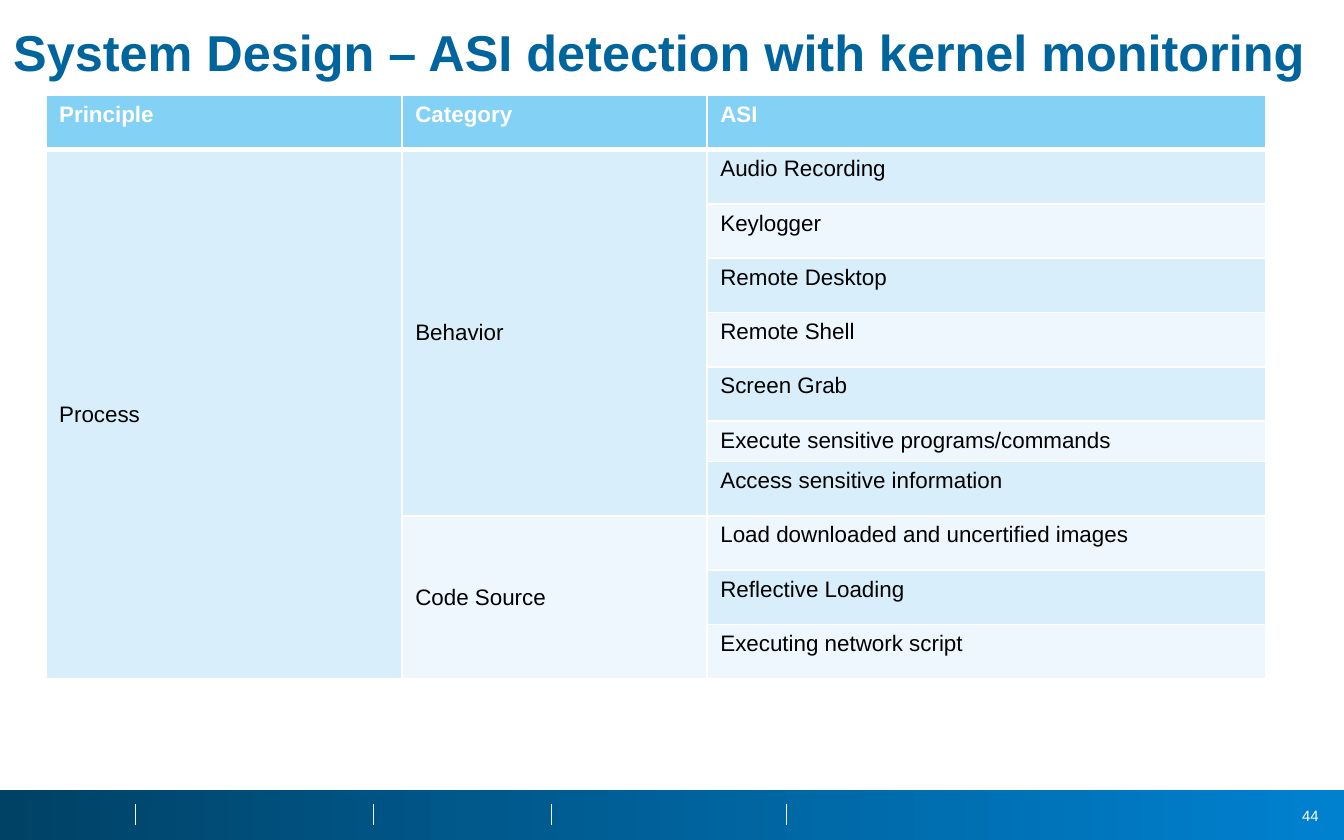
from typing import NamedTuple

from lxml.etree import SubElement
from pptx import Presentation
from pptx.dml.color import RGBColor
from pptx.enum.shapes import MSO_CONNECTOR, MSO_SHAPE
from pptx.enum.text import MSO_ANCHOR, PP_ALIGN
from pptx.oxml.ns import qn
from pptx.util import Inches, Pt

WHITE, BLACK, HEAD = "FFFFFF", "000000", "83D1F5"
BANDS = ("D9EEFB", "EDF7FD")
WIDTHS = (2.65, 2.27, 4.16)
TALL, SHORT = 4.04 / 10, 0.3
SHORT_ROW = 6
TICKS = (1.01, 2.78, 4.1, 5.85)


class Style(NamedTuple):
    """Look of a run of text."""
    size: float
    color: str
    bold: bool = False


class Group(NamedTuple):
    """Category with the ASI entries that belong to it."""
    name: str
    items: tuple[str, ...]


GROUPS = (
    Group("Behavior", (
        "Audio Recording", "Keylogger", "Remote Desktop", "Remote Shell", "Screen Grab",
        "Execute sensitive programs/commands", "Access sensitive information")),
    Group("Code Source", (
        "Load downloaded and uncertified images", "Reflective Loading",
        "Executing network script")),
)


def paint(target, color: str) -> None:
    """Set a colour format from a hex string."""
    target.rgb = RGBColor.from_string(color)


def write(frame, text: str, style: Style):
    """Add one run to the first paragraph of a frame and return the paragraph."""
    para = frame.paragraphs[0]
    run = para.add_run()
    run.text = text
    run.font.name, run.font.size, run.font.bold = "Arial", Pt(style.size), style.bold
    paint(run.font.color, style.color)
    return para


def label(slide, text: str, box: tuple, style: Style):
    """Add a wrapped text box and return its frame and paragraph."""
    frame = slide.shapes.add_textbox(*map(Inches, box)).text_frame
    frame.word_wrap = True
    return frame, write(frame, text, style)


def edge(cell, side: str, width: float) -> None:
    """Add a white border to one side of a cell."""
    props = cell._tc.get_or_add_tcPr()
    line = SubElement(props, qn(f"a:ln{side}"), w=str(Pt(width)))
    fill = SubElement(line, qn("a:solidFill"))
    SubElement(fill, qn("a:srgbClr"), val=WHITE)


def dress(cell, row: int, color: str) -> None:
    """Give a cell its borders and fill."""
    edge(cell, "L", 1)
    edge(cell, "R", 1)
    edge(cell, "T", 3 if row == 1 else 1)
    edge(cell, "B", 3 if row == 0 else 1)
    cell.fill.solid()
    paint(cell.fill.fore_color, color)


def span(table, top: int, end: int, col: int, text: str) -> None:
    """Merge cells down a column and write the centred name."""
    cell = table.cell(top, col)
    cell.merge(table.cell(end, col))
    cell.vertical_anchor = MSO_ANCHOR.MIDDLE
    write(cell.text_frame, text, Style(12, BLACK))


def grid(slide) -> None:
    """Draw the table of principles, categories and ASI entries."""
    count = 1 + sum(len(group.items) for group in GROUPS)
    high = TALL * (count - 1) + SHORT
    box = map(Inches, (0.34, 0.71, sum(WIDTHS), high))
    table = slide.shapes.add_table(count, len(WIDTHS), *box).table
    table.horz_banding = False
    for col, width in zip(table.columns, WIDTHS):
        col.width = Inches(width)
    for index, row in enumerate(table.rows):
        row.height = Inches(SHORT if index == SHORT_ROW else TALL)

    for col, text in enumerate(("Principle", "Category", "ASI")):
        cell = table.cell(0, col)
        dress(cell, 0, HEAD)
        write(cell.text_frame, text, Style(12, WHITE, True))

    row = 1
    for order, group in enumerate(GROUPS):
        top = row
        for item in group.items:
            colors = (BANDS[0], BANDS[order], BANDS[(row - 1) % 2])
            for col, color in enumerate(colors):
                dress(table.cell(row, col), row, color)
            write(table.cell(row, 2).text_frame, item, Style(12, BLACK))
            row += 1
        span(table, top, row - 1, 1, group.name)
    span(table, 1, count - 1, 0, "Process")


def footer(slide) -> None:
    """Draw the gradient bar, its tick lines and the page number."""
    box = map(Inches, (0, 5.88, 10, 0.37))
    bar = slide.shapes.add_shape(MSO_SHAPE.RECTANGLE, *box)
    bar.shadow.inherit = False
    bar.line.fill.background()
    bar.fill.gradient()
    bar.fill.gradient_angle = 0
    for stop, color, place in zip(bar.fill.gradient_stops, ("004266", "0081D0"), (0, 1)):
        paint(stop.color, color)
        stop.position = place
    for left in TICKS:
        ends = map(Inches, (left, 5.98, left, 6.14))
        tick = slide.shapes.add_connector(MSO_CONNECTOR.STRAIGHT, *ends)
        tick.line.width = Pt(0.25)
        paint(tick.line.color, "F2F2F2")
        SubElement(tick._element.spPr, qn("a:effectLst"))
    frame, para = label(slide, "44", (9.49, 5.95, 0.42, 0.24), Style(8, WHITE))
    frame.vertical_anchor = MSO_ANCHOR.MIDDLE
    para.alignment = PP_ALIGN.RIGHT


def main() -> None:
    """Build the slide and save it."""
    deck = Presentation()
    deck.slide_width, deck.slide_height = Inches(10), Inches(6.25)
    slide = deck.slides.add_slide(deck.slide_layouts[6])
    footer(slide)
    title = "System Design – ASI detection with kernel monitoring"
    para = label(slide, title, (0, 0.16, 10.25, 0.42), Style(27, "00649D", True))[1]
    para.line_spacing = 0.9
    grid(slide)
    deck.save("out.pptx")


if __name__ == "__main__":
    main()
